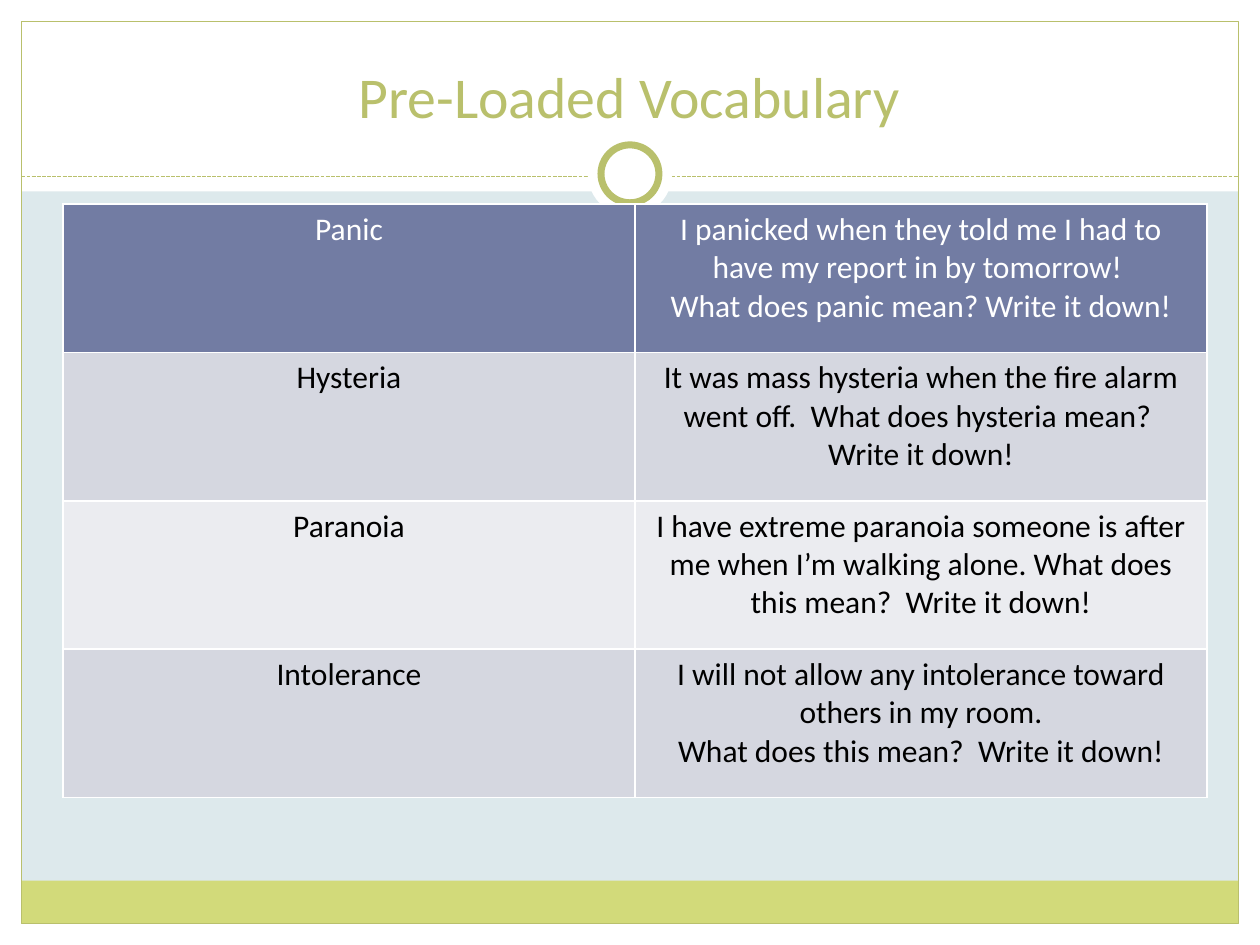
from lxml import etree
from pptx import Presentation
from pptx.dml.color import RGBColor
from pptx.enum.dml import MSO_LINE
from pptx.enum.shapes import MSO_CONNECTOR, MSO_SHAPE
from pptx.enum.text import MSO_ANCHOR, MSO_AUTO_SIZE, PP_ALIGN
from pptx.oxml.ns import qn
from pptx.util import Inches, Pt

RECT, OVAL = MSO_SHAPE.RECTANGLE, MSO_SHAPE.OVAL
STRAIGHT, DASH = MSO_CONNECTOR.STRAIGHT, MSO_LINE.SQUARE_DOT
CENTER, BOTTOM, NO_FIT = PP_ALIGN.CENTER, MSO_ANCHOR.BOTTOM, MSO_AUTO_SIZE.NONE

WHITE = RGBColor(0xFF, 0xFF, 0xFF)
BLACK = RGBColor(0, 0, 0)
PALE_BLUE = RGBColor(0xDD, 0xE9, 0xEC)
OLIVE = RGBColor(0xB9, 0xC0, 0x6C)
LIME = RGBColor(0xD2, 0xDA, 0x7A)
SLATE = RGBColor(0x72, 0x7C, 0xA3)
BANDS = (RGBColor(0xEB, 0xEC, 0xF0), RGBColor(0xD5, 0xD7, 0xE0))

FONT = "Calibri"
WIDTH, HEIGHT = 10, 7.5
MARGIN = 0.17
HEADER_HEIGHT = 1.52
FOOTER_HEIGHT = 0.34

VOCABULARY = [
    ("Panic", "I panicked when they told me I had to have my report in by tomorrow! \n"
              "What does panic mean? Write it down!"),
    ("Hysteria", "It was mass hysteria when the fire alarm went off.  "
                 "What does hysteria mean?  Write it down!"),
    ("Paranoia", "I have extreme paranoia someone is after me when I’m walking alone. "
                 "What does this mean?  Write it down!"),
    ("Intolerance", "I will not allow any intolerance toward others in my room.\n"
                    "What does this mean?  Write it down!"),
]


def add_block(slide, kind, box, fill=None, line=None, weight=0.75):
    block = slide.shapes.add_shape(kind, *map(Inches, box))
    block.shadow.inherit = False
    if fill is None:
        block.fill.background()
    else:
        block.fill.solid()
        block.fill.fore_color.rgb = fill
    if line is None:
        block.line.fill.background()
    else:
        block.line.color.rgb = line
        block.line.width = Pt(weight)


def add_ring(slide, center_x, center_y):
    for size, line in ((0.67, None), (0.46, OLIVE)):
        box = (center_x - size / 2, center_y - size / 2, size, size)
        add_block(slide, OVAL, box, WHITE, line, 4)


def add_frame(slide, box):
    left, top, width, height = box
    right, bottom = left + width, top + height

    # White margins and header
    for margin in ((0, bottom, WIDTH, HEIGHT - bottom),
                   (0, 0, WIDTH, HEADER_HEIGHT),
                   (0, 0, left, HEIGHT),
                   (right, 0, WIDTH - right, HEIGHT)):
        add_block(slide, RECT, margin, WHITE)

    # Footer band and outline
    add_block(slide, RECT, (left, bottom - FOOTER_HEIGHT, width, FOOTER_HEIGHT), LIME)
    add_block(slide, RECT, box, line=OLIVE)

    # Dashed divider with the ring on it
    divider_y = 1.4
    divider = slide.shapes.add_connector(
        STRAIGHT, *map(Inches, (left, divider_y, right, divider_y)))
    divider.line.color.rgb = OLIVE
    divider.line.width = Pt(0.75)
    divider.line.dash_style = DASH
    etree.SubElement(divider.element.spPr, qn("a:effectLst"))
    add_ring(slide, WIDTH / 2, 1.38)


def place_title(slide, box, text):
    title = slide.shapes.title
    title.left, title.top, title.width, title.height = map(Inches, box)
    frame = title.text_frame
    frame.text = text
    frame.word_wrap = True
    frame.auto_size = NO_FIT
    frame.vertical_anchor = BOTTOM
    heading = frame.paragraphs[0]
    heading.alignment = CENTER
    heading.font.name = FONT
    heading.font.size = Pt(33)
    heading.font.color.rgb = OLIVE
    # Bring the title in front of the white header
    title.element.getparent().append(title.element)


def set_borders(cell, color, weight):
    properties = cell._tc.get_or_add_tcPr()
    for position, side in enumerate(("lnL", "lnR", "lnT", "lnB")):
        border = etree.Element(qn(f"a:{side}"), w=str(Pt(weight)))
        fill = etree.SubElement(border, qn("a:solidFill"))
        etree.SubElement(fill, qn("a:srgbClr"), val=str(color))
        properties.insert(position, border)


def format_cell(cell, text, fill, color):
    cell.text = text
    cell.fill.solid()
    cell.fill.fore_color.rgb = fill
    set_borders(cell, WHITE, 1)
    for paragraph in cell.text_frame.paragraphs:
        paragraph.alignment = CENTER
        paragraph.font.name = FONT
        paragraph.font.size = Pt(18)
        paragraph.font.bold = False
        paragraph.font.color.rgb = color


def add_vocabulary(slide, box, entries):
    table = slide.shapes.add_table(
        len(entries), len(entries[0]), *map(Inches, box)).table
    for row, entry in enumerate(entries):
        fill, color = (BANDS[row % 2], BLACK) if row else (SLATE, WHITE)
        for column, text in enumerate(entry):
            format_cell(table.cell(row, column), text, fill, color)


def main():
    deck = Presentation()
    deck.slide_width, deck.slide_height = Inches(WIDTH), Inches(HEIGHT)
    slide = deck.slides.add_slide(deck.slide_layouts[5])
    slide.background.fill.solid()
    slide.background.fill.fore_color.rgb = PALE_BLUE

    add_frame(slide, (MARGIN, MARGIN, WIDTH - 2 * MARGIN, HEIGHT - 2 * MARGIN))
    place_title(slide, (0.33, 0.25, 9.33, 0.83), "Pre-Loaded Vocabulary")
    add_vocabulary(slide, (0.5, 1.62, 9.08, 4.71), VOCABULARY)
    deck.save("out.pptx")


if __name__ == "__main__":
    main()
